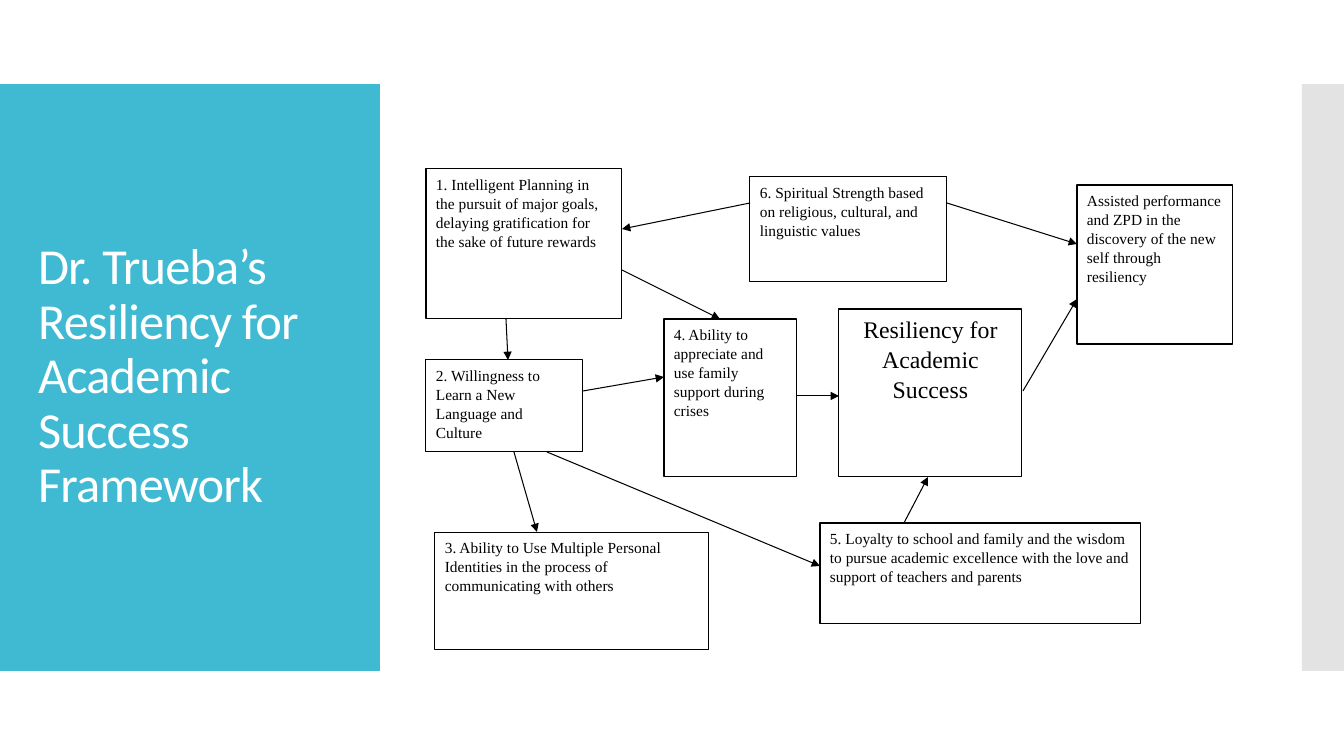
import pptx
import pptx.dml.color
import pptx.enum.shapes
import pptx.enum.text
import pptx.oxml.ns
import pptx.util
import lxml.etree

THEME = {
    "teal": pptx.dml.color.RGBColor.from_string("40BAD2"),
    "grey": pptx.dml.color.RGBColor.from_string("C8C8C8"),
    "white": pptx.dml.color.RGBColor.from_string("FFFFFF"),
    "black": pptx.dml.color.RGBColor.from_string("000000"),
    "title_font": "Calibri",
    "box_font": "Times New Roman",
    "title_size": pptx.util.Pt(36),
    "box_size": pptx.util.Pt(11),
    "outcome_size": pptx.util.Pt(17),
    "line_width": pptx.util.Pt(0.75),
}
EMU_PER_PX = 914400 / 100.8
RECTANGLE = pptx.enum.shapes.MSO_SHAPE.RECTANGLE
ALIGN = pptx.enum.text.PP_ALIGN
ANCHOR = pptx.enum.text.MSO_ANCHOR
qn = pptx.oxml.ns.qn


def px(*lengths):
    return [pptx.util.Emu(round(length * EMU_PER_PX)) for length in lengths]


def write(frame, text, font, size, color, align, spacing):
    frame.text = text
    frame.word_wrap = True
    paragraph = frame.paragraphs[0]
    paragraph.alignment = align
    paragraph.line_spacing = spacing
    run = paragraph.runs[0]
    run.font.name = font
    run.font.size = size
    run.font.color.rgb = color
    return run


deck = pptx.Presentation()
deck.slide_width, deck.slide_height = px(1344, 756)
slide = deck.slides.add_slide(deck.slide_layouts[5])
shapes = slide.shapes

panels = [(0, 84, 380, 587, "teal", 100), (1302, 84, 42, 587, "grey", 50)]
for left, top, width, height, color, opacity in panels:
    panel = shapes.add_shape(RECTANGLE, *px(left, top, width, height))
    panel.shadow.inherit = False
    panel.fill.solid()
    panel.fill.fore_color.rgb = THEME[color]
    panel.line.fill.background()
    if opacity < 100:
        tint = panel.fill._xPr.find(qn("a:solidFill"))[0]
        lxml.etree.SubElement(tint, qn("a:alpha"), val=str(opacity * 1000))

title = shapes.title
title.left, title.top, title.width, title.height = px(28, 124, 325, 507)
heading = write(title.text_frame, "Dr. Trueba’s Resiliency for Academic Success Framework",
                THEME["title_font"], THEME["title_size"], THEME["white"], ALIGN.LEFT, 0.9)
heading._r.get_or_add_rPr().set("spc", "-60")
title.text_frame.vertical_anchor = ANCHOR.MIDDLE
shapes._spTree.append(title._element)

factors = [
    (426, 169, 196, 150, "1. Intelligent Planning in the pursuit of major goals, "
                         "delaying gratification for the sake of future rewards"),
    (426, 360, 157, 92, "2. Willingness to Learn a New Language and Culture"),
    (435, 532, 274, 118, "3. Ability to Use Multiple Personal Identities in the process "
                         "of communicating with others"),
    (664, 319, 133, 158, "4. Ability to appreciate and use family support during crises"),
    (750, 177, 197, 105, "6. Spiritual Strength based on religious, cultural, and "
                         "linguistic values"),
    (820, 523, 321, 101, "5. Loyalty to school and family and the wisdom to pursue academic "
                         "excellence with the love and support of teachers and parents"),
    (839, 309, 183, 168, "Resiliency for Academic Success"),
    (1077, 185, 156, 159, "Assisted performance and ZPD in the discovery of the new self "
                          "through resiliency"),
]
for left, top, width, height, text in factors:
    is_outcome = text == "Resiliency for Academic Success"
    factor = shapes.add_shape(RECTANGLE, *px(left, top, width, height))
    factor.shadow.inherit = False
    factor.fill.solid()
    factor.fill.fore_color.rgb = THEME["white"]
    factor.line.color.rgb = THEME["black"]
    factor.line.width = THEME["line_width"]
    factor.text_frame.vertical_anchor = ANCHOR.TOP
    write(factor.text_frame, text, THEME["box_font"],
          THEME["outcome_size"] if is_outcome else THEME["box_size"], THEME["black"],
          ALIGN.CENTER if is_outcome else ALIGN.LEFT, 1.04)

influences = [
    (506, 319, 508, 360),
    (547, 452, 820, 566),
    (514, 452, 537, 532),
    (583, 391, 664, 377),
    (904, 523, 928, 477),
    (797, 396, 839, 396),
    (622, 270, 720, 319),
    (947, 203, 1077, 244),
    (1023, 391, 1077, 299),
    (750, 203, 622, 229),
]
for influence in influences:
    arrow = shapes.add_connector(pptx.enum.shapes.MSO_CONNECTOR.STRAIGHT, *px(*influence))
    arrow.line.color.rgb = THEME["black"]
    arrow.line.width = THEME["line_width"]
    lxml.etree.SubElement(arrow.line._get_or_add_ln(), qn("a:tailEnd"), type="triangle")
    lxml.etree.SubElement(arrow._element.spPr, qn("a:effectLst"))

deck.save("out.pptx")
